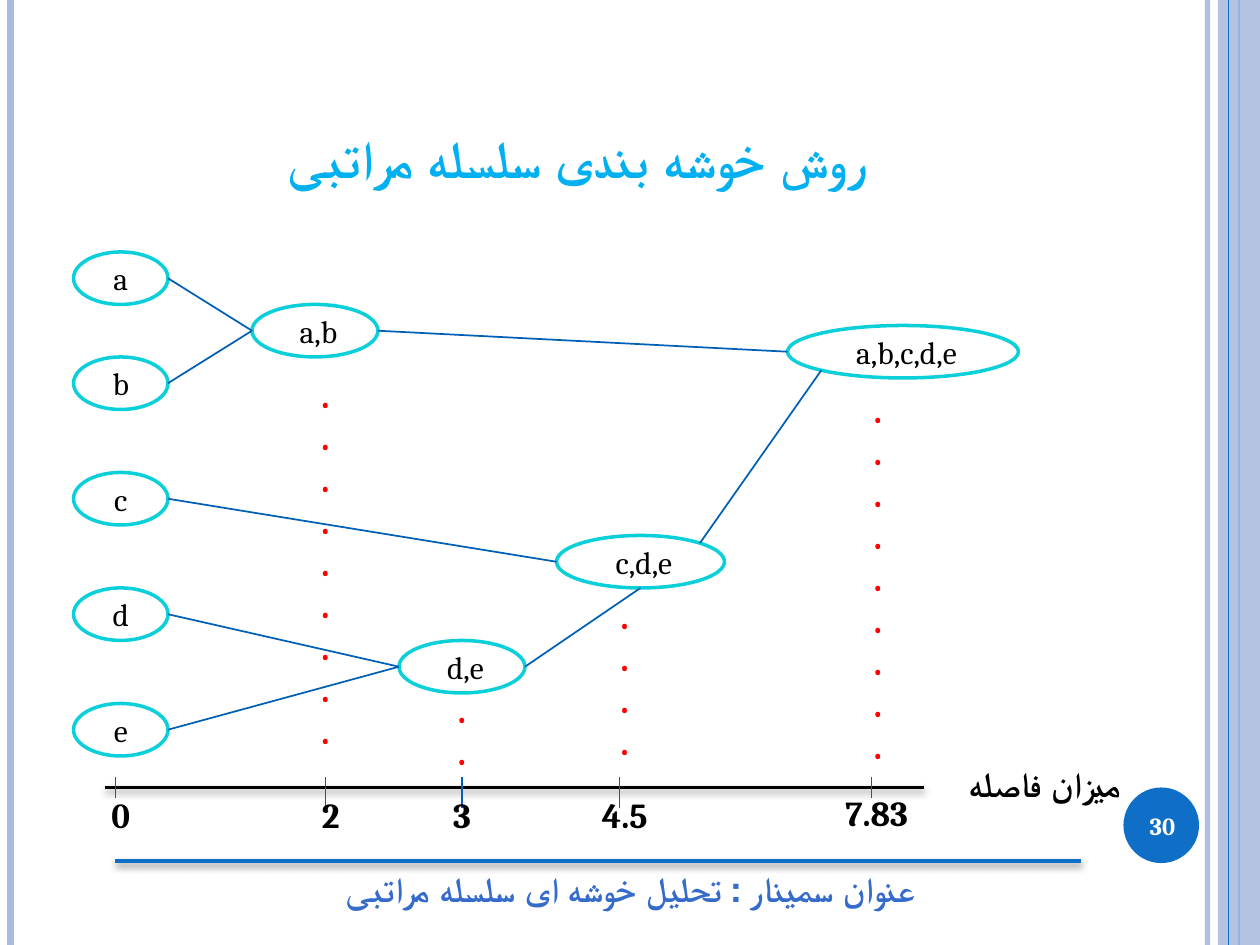
from dataclasses import dataclass
from math import cos, radians, sin

from lxml.etree import SubElement
from pptx import Presentation
from pptx.dml.color import RGBColor
from pptx.enum.shapes import MSO_CONNECTOR, MSO_SHAPE
from pptx.enum.text import MSO_ANCHOR, PP_ALIGN
from pptx.oxml.ns import qn
from pptx.util import Inches, Pt

UNITS_PER_INCH = 12  # the grid has 120 columns and 90 rows


@dataclass(frozen=True)
class Theme:
    font: str = "Cambria"
    band: str = "ABBBDF"
    accent: str = "0F6FC6"
    link: str = "0060B6"
    node_line: str = "0BD0D9"
    title: str = "00B0F0"
    footer: str = "356BCA"
    dots: str = "FF0000"
    black: str = "000000"
    white: str = "FFFFFF"
    title_size: int = 30
    label_size: int = 20
    node_size: int = 18
    number_size: int = 14


def grid(units):
    return Inches(units / UNITS_PER_INCH)


def set_alpha(fill, percent):
    """Make the solid fill inside a line or shape element partly transparent."""
    color = fill.find(".//" + qn("a:srgbClr"))
    SubElement(color, qn("a:alpha"), val=str(percent * 1000))


def write_text(shape, text, size, color, bold=False, anchor=MSO_ANCHOR.TOP,
               rtl=False, font="Cambria"):
    """Fill a shape with centred text, one paragraph for each line."""
    frame = shape.text_frame
    frame.word_wrap = True
    frame.vertical_anchor = anchor
    for index, line in enumerate(text.split("\n")):
        para = frame.add_paragraph() if index else frame.paragraphs[0]
        para.alignment = PP_ALIGN.CENTER
        if rtl:
            para._p.get_or_add_pPr().set("rtl", "1")
        span = para.add_run()
        span.text = line
        span.font.name = font
        span.font.size = Pt(size)
        span.font.bold = bold
        span.font.color.rgb = RGBColor.from_string(color)


class Painter:
    def __init__(self, slide, theme):
        self.slide = slide
        self.theme = theme

    def shape(self, kind, area, fill, line=None, alpha=None):
        shape = self.slide.shapes.add_shape(kind, *map(grid, area))
        shape.shadow.inherit = False
        shape.fill.solid()
        shape.fill.fore_color.rgb = RGBColor.from_string(fill)
        if alpha:
            set_alpha(shape._element.spPr.find(qn("a:solidFill")), alpha)
        if line:
            shape.line.color.rgb = RGBColor.from_string(line)
            shape.line.width = Pt(2)
        else:
            shape.line.fill.background()
        return shape

    def text(self, area, text, size, color, **style):
        box = self.slide.shapes.add_textbox(*map(grid, area))
        write_text(box, text, size, color, font=self.theme.font, **style)

    def line(self, start, end, color, width=1, alpha=None, shadow=False):
        line = self.slide.shapes.add_connector(
            MSO_CONNECTOR.STRAIGHT, *map(grid, (*start, *end)))
        line.line.color.rgb = RGBColor.from_string(color)
        line.line.width = Pt(width)
        properties = line._element.spPr
        if alpha:
            set_alpha(properties.find(qn("a:ln")), alpha)
        effects = SubElement(properties, qn("a:effectLst"))
        if shadow:
            outer = SubElement(effects, qn("a:outerShdw"), blurRad=str(Pt(4)),
                               dist=str(Pt(2)), dir="5400000", rotWithShape="0")
            black = SubElement(outer, qn("a:srgbClr"), val=self.theme.black)
            SubElement(black, qn("a:alpha"), val="41000")

    def node(self, area, text):
        theme = self.theme
        oval = self.shape(MSO_SHAPE.OVAL, area, theme.white, theme.node_line)
        write_text(oval, text, theme.node_size, theme.black,
                   anchor=MSO_ANCHOR.MIDDLE, font=theme.font)

    def link(self, first, first_angle, second, second_angle):
        self.line(oval_point(first, first_angle),
                  oval_point(second, second_angle), self.theme.link)


def oval_point(area, angle):
    """Point on an oval, in clockwise degrees from its right end."""
    left, top, width, height = area
    turn = radians(angle)
    return (left + width / 2 * (1 + cos(turn)),
            top + height / 2 * (1 + sin(turn)))


NODE_HEIGHT = 5
NODES = {  # left, top, width
    "a": (7, 24, 9), "b": (7, 34, 9), "c": (7, 45, 9),
    "d": (7, 56, 9), "e": (7, 67, 9),
    " a,b": (24, 29, 12), " d,e": (38, 61, 12),
    " c,d,e": (53, 51, 16), " a,b,c,d,e": (75, 31, 22),
}
RIGHT, BOTTOM, BOTTOM_LEFT, LEFT, TOP_RIGHT = 0, 90, 135, 180, 315
LINKS = [
    ("a", RIGHT, " a,b", LEFT), ("b", RIGHT, " a,b", LEFT),
    (" a,b", RIGHT, " a,b,c,d,e", LEFT), ("c", RIGHT, " c,d,e", LEFT),
    ("d", RIGHT, " d,e", LEFT), ("e", RIGHT, " d,e", LEFT),
    (" d,e", RIGHT, " c,d,e", BOTTOM),
    (" c,d,e", TOP_RIGHT, " a,b,c,d,e", BOTTOM_LEFT),
]
TICKS = [  # column, last row, label, label left, label top, label width
    (11, 76, "0", 6, 75, 11), (31, 77, "2", 27, 75, 9),
    (44, 77, "3", 38, 75, 12), (59, 77, "4.5", 55, 75, 9),
    (83, 76, "7.83", 78, 74.8, 11),
]
DOTS = [  # left, top, width, count
    (29, 35, 4, 9), (79.1, 36.4, 9, 9), (53, 56, 13, 4), (38, 65, 12, 2),
]


def draw_frame(painter, theme):
    for column, color, width, alpha in [(115, theme.band, 3, 93),
                                        (1, theme.band, 4.5, None),
                                        (118, theme.accent, 1.5, None)]:
        painter.line((column, 0), (column, 90), color, width, alpha)
    painter.shape(MSO_SHAPE.RECTANGLE, (116, 0, 4, 90), theme.band, alpha=87)
    painter.line((117, 0), (117, 90), theme.accent, 0.75)
    painter.shape(MSO_SHAPE.OVAL, (107, 75, 7.2, 7.2), theme.accent)
    painter.text((106.7, 75.2, 8, 6.8), "30", theme.number_size, theme.white,
                 bold=True, anchor=MSO_ANCHOR.MIDDLE)
    painter.text((13.8, 82, 92.5, 5.3), "عنوان سمینار : تحلیل خوشه ای سلسله مراتبی",
                 theme.label_size, theme.footer, bold=True)
    painter.line((11, 82), (103, 82), theme.accent, 2.75, shadow=True)
    painter.text((6, 3.6, 98, 15), "روش خوشه بندی سلسله مراتبی",
                 theme.title_size, theme.title, bold=True,
                 anchor=MSO_ANCHOR.BOTTOM, rtl=True)


def draw_axis(painter, theme):
    painter.line((10, 75), (88, 75), theme.black, 2, shadow=True)
    for column, last_row, label, left, top, width in TICKS:
        painter.line((column, 74), (column, last_row), theme.link)
        painter.text((left, top, width, 5.3), label,
                     theme.label_size, theme.black, bold=True)
    painter.text((91, 72, 17, 5.3), "میزان فاصله",
                 theme.label_size, theme.black, bold=True)


def draw_tree(painter, theme):
    areas = {name: (*place, NODE_HEIGHT) for name, place in NODES.items()}
    for name, area in areas.items():
        painter.node(area, name)
    for first, first_angle, second, second_angle in LINKS:
        painter.link(areas[first], first_angle, areas[second], second_angle)
    for left, top, width, count in DOTS:
        painter.text((left, top, width, 4 * count + 1.2), "\n".join("." * count),
                     theme.label_size, theme.dots, bold=True)


def main():
    deck = Presentation()
    deck.slide_width, deck.slide_height = grid(120), grid(90)
    theme = Theme()
    painter = Painter(deck.slides.add_slide(deck.slide_layouts[6]), theme)
    for draw in (draw_frame, draw_axis, draw_tree):
        draw(painter, theme)
    deck.save("out.pptx")


if __name__ == "__main__":
    main()
